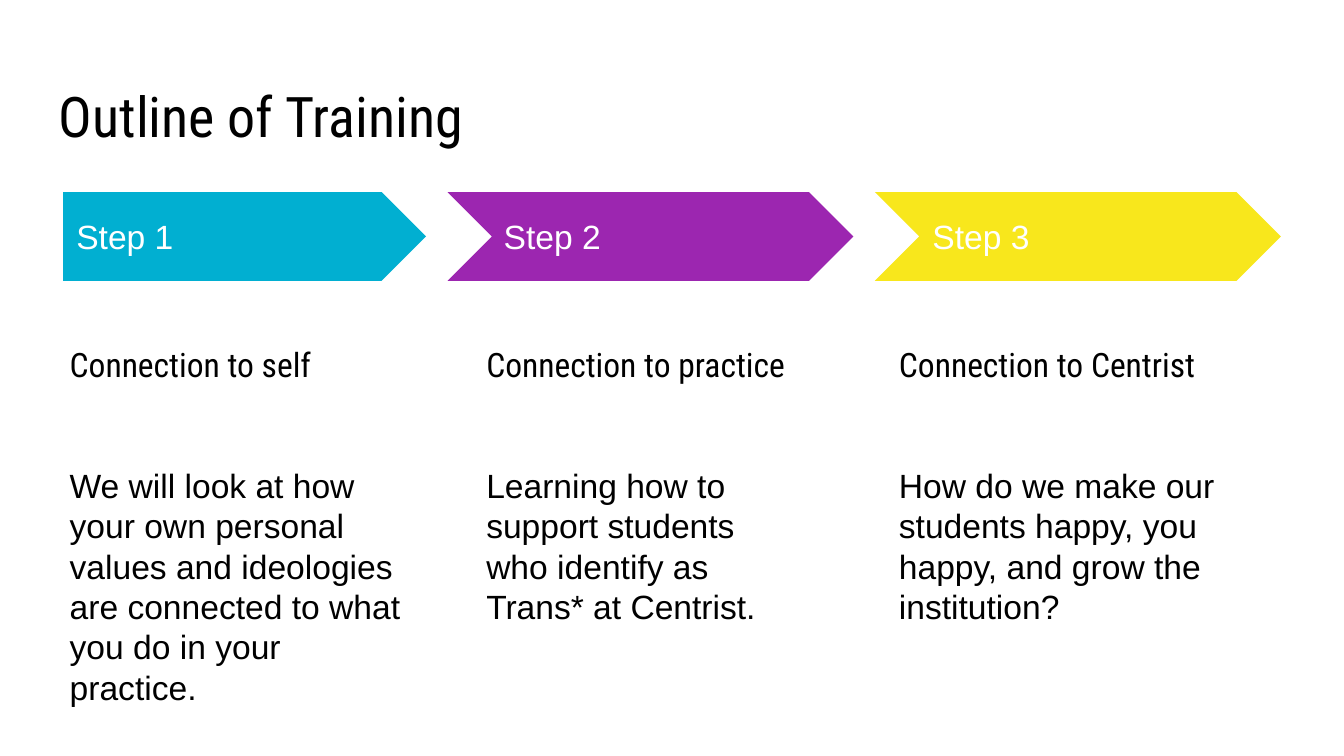
from pptx import Presentation
from pptx.dml.color import RGBColor
from pptx.enum.shapes import MSO_SHAPE
from pptx.enum.text import MSO_ANCHOR
from pptx.util import Inches, Pt

TOP, MIDDLE, BOTTOM = MSO_ANCHOR.TOP, MSO_ANCHOR.MIDDLE, MSO_ANCHOR.BOTTOM
PENTAGON, CHEVRON = MSO_SHAPE.PENTAGON, MSO_SHAPE.CHEVRON

HEADING_FONT, BODY_FONT = "Roboto Condensed", "Arial"
BLACK, WHITE = "000000", "FFFFFF"
LINE = 21.6  # line pitch of the column text, in points

# arrow: shape, left, width, colour; label left; column: left, width, height, texts
STEPS = [
    (PENTAGON, 0.47, 2.7, "01AFD1", 0.47, 0.42, 2.75, 2.74, "Connection to self",
     "We will look at how your own personal values and ideologies "
     "are connected to what you do in your practice."),
    (CHEVRON, 3.33, 3.02, "9C26B0", 3.65, 3.52, 2.47, 2.86, "Connection to practice",
     "Learning how to support students who identify as Trans* at Centrist."),
    (CHEVRON, 6.51, 3.02, "F8E71C", 6.84, 6.59, 2.61, 2.74, "Connection to Centrist",
     "How do we make our students happy, you happy, and grow the institution?"),
]


def rgb(color):
    return RGBColor.from_string(color)


def add_frame(slide, left, top, width, height, anchor=TOP):
    """Add a wrapping text box with equal insets and return its text frame."""
    box = slide.shapes.add_textbox(Inches(left), Inches(top), Inches(width), Inches(height))
    tf = box.text_frame
    tf.word_wrap = True
    tf.vertical_anchor = anchor
    tf.margin_left = tf.margin_right = tf.margin_top = tf.margin_bottom = Inches(0.1)
    return tf


def write(p, text, size, font, color):
    p.text = text
    p.font.size = Pt(size)
    p.font.name = font
    p.font.color.rgb = rgb(color)


def add_arrow(slide, kind, left, width, color):
    sp = slide.shapes.add_shape(kind, Inches(left), Inches(1.43), Inches(width), Inches(0.66))
    sp.adjustments[0] = 0.5
    sp.shadow.inherit = False
    sp.fill.solid()
    sp.fill.fore_color.rgb = rgb(color)
    sp.line.fill.background()


def add_column(slide, left, width, height, heading, body):
    tf = add_frame(slide, left, 2.46, width, height)
    head = tf.paragraphs[0]
    write(head, heading, 18, HEADING_FONT, BLACK)
    head.space_after = Pt(2 * LINE)
    write(tf.add_paragraph(), body, 18, BODY_FONT, BLACK)
    for p in tf.paragraphs:
        p.line_spacing = Pt(LINE)


def main():
    prs = Presentation()
    prs.slide_width = Inches(10)
    prs.slide_height = Inches(10 * 9 / 16)
    slide = prs.slides.add_slide(prs.slide_layouts[6])

    title = add_frame(slide, 0.34, 0.41, 9.32, 0.8, BOTTOM)
    write(title.paragraphs[0], "Outline of Training", 30, HEADING_FONT, BLACK)

    for number, step in enumerate(STEPS, 1):
        kind, left, width, color, label_left, *column = step
        add_arrow(slide, kind, left, width, color)
        label = add_frame(slide, label_left, 1.59, 2.47, 0.34, MIDDLE)
        write(label.paragraphs[0], f"Step {number}", 18, BODY_FONT, WHITE)
        add_column(slide, *column)

    prs.save("out.pptx")


if __name__ == "__main__":
    main()
